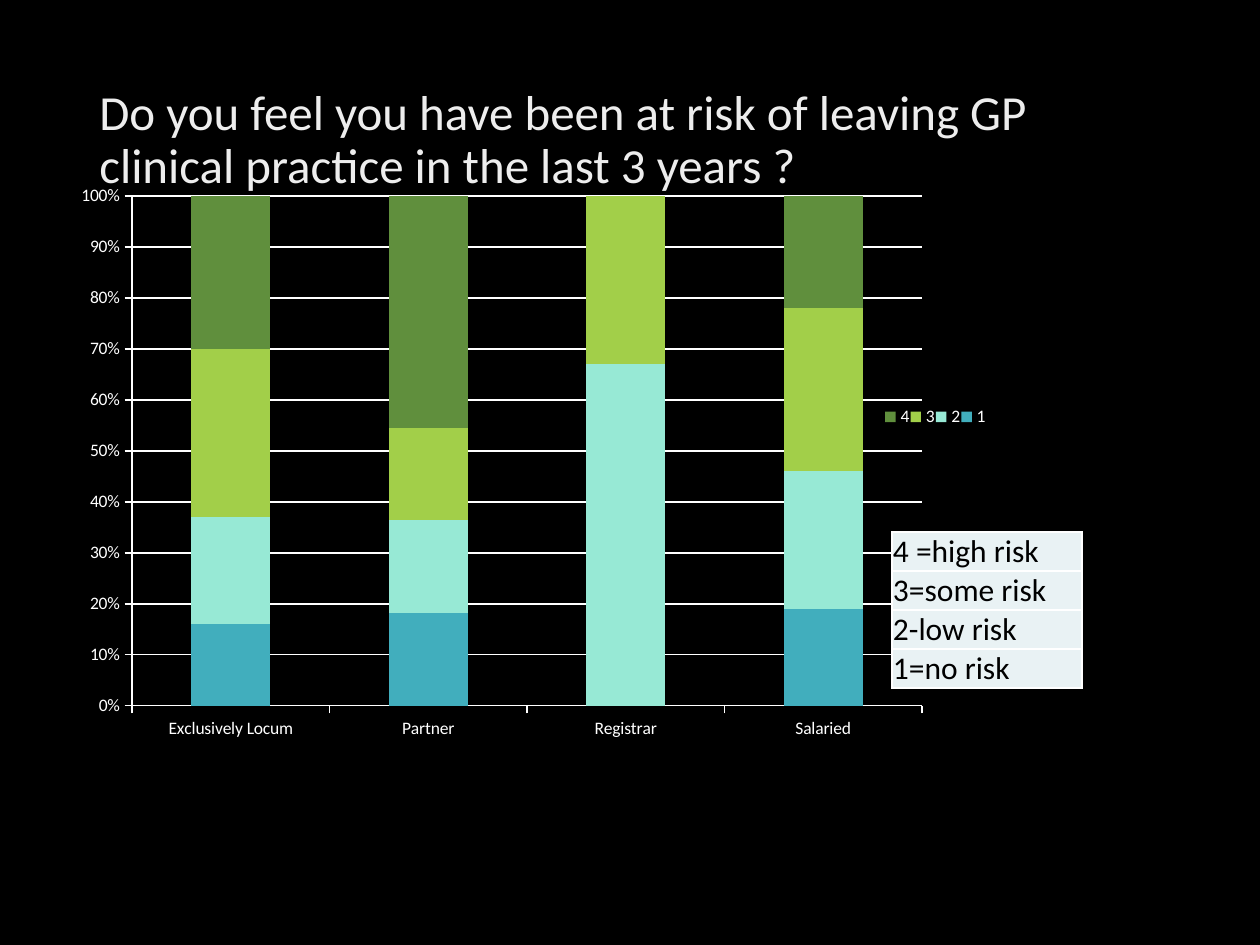
from typing import NamedTuple, Optional

import pptx
import pptx.chart.data
import pptx.dml.color
import pptx.enum.chart
import pptx.enum.text
import pptx.oxml
import pptx.oxml.ns
import pptx.util
from lxml import etree

PX = 914400 // 126
FONT = "Calibri"
RGB = pptx.dml.color.RGBColor
BLACK = RGB(0x00, 0x00, 0x00)
WHITE = RGB(0xFF, 0xFF, 0xFF)
TITLE_GREY = RGB(0xED, 0xED, 0xED)
KEY_FILL = RGB(0xE9, 0xF2, 0xF4)


class Box(NamedTuple):
    left: int
    top: int
    width: int
    height: int

    def emu(self) -> list[int]:
        return [v * PX for v in self]


class RiskSeries(NamedTuple):
    name: str
    values: tuple[Optional[int], ...]
    color: RGB


TITLE = "Do you feel you have been at risk of leaving GP clinical practice in the last 3 years ?"
CATEGORIES = ("Exclusively Locum", "Partner", "Registrar", "Salaried")
SERIES = (
    RiskSeries("1", (16, 18, None, 19), RGB(0x41, 0xAE, 0xBD)),
    RiskSeries("2", (21, 18, 67, 27), RGB(0x97, 0xE9, 0xD5)),
    RiskSeries("3", (33, 18, 33, 32), RGB(0xA2, 0xCF, 0x49)),
    RiskSeries("4", (30, 45, None, 22), RGB(0x60, 0x8F, 0x3D)),
)
RISK_KEY = ("4 =high risk", "3=some risk", "2-low risk", "1=no risk")

TITLE_BOX = Box(87, 50, 1086, 183)
CHART_BOX = Box(63, 175, 924, 576)
PLOT_BOX = Box(132, 196, 790, 510)
LEGEND_BOX = Box(884, 404, 108, 26)
KEY_BOX = Box(892, 532, 190, 156)


def style_run(r, size: int, color: RGB) -> None:
    r.font.name = FONT
    r.font.size = pptx.util.Pt(size)
    r.font.color.rgb = color


def add_title(s) -> None:
    tf = s.shapes.add_textbox(*TITLE_BOX.emu()).text_frame
    tf.word_wrap = True
    tf.vertical_anchor = pptx.enum.text.MSO_ANCHOR.MIDDLE
    tf.text = TITLE
    p = tf.paragraphs[0]
    p.line_spacing = 0.9
    style_run(p.runs[0], 28, TITLE_GREY)


def layout_xml(box: Box, inner: bool):
    """Manual chart layout, as fractions of the chart's frame."""
    fractions = {
        "x": (box.left - CHART_BOX.left) / CHART_BOX.width,
        "y": (box.top - CHART_BOX.top) / CHART_BOX.height,
        "w": box.width / CHART_BOX.width,
        "h": box.height / CHART_BOX.height,
    }
    target = '<c:layoutTarget val="inner"/>' if inner else ""
    modes = "".join(f'<c:{k}Mode val="edge"/>' for k in "xy")
    values = "".join(f'<c:{k} val="{v:.4f}"/>' for k, v in fractions.items())
    return pptx.oxml.parse_xml(
        f'<c:layout {pptx.oxml.ns.nsdecls("c")}>'
        f"<c:manualLayout>{target}{modes}{values}</c:manualLayout></c:layout>"
    )


def set_layout(parent, box: Box, index: int, inner: bool = False) -> None:
    for old in parent.findall(pptx.oxml.ns.qn("c:layout")):
        parent.remove(old)
    parent.insert(index, layout_xml(box, inner))


def white_line(line) -> None:
    line.color.rgb = WHITE
    line.width = pptx.util.Pt(0.75)


def add_risk_chart(s) -> None:
    data = pptx.chart.data.CategoryChartData()
    data.categories = CATEGORIES
    for item in SERIES:
        data.add_series(item.name, item.values)
    kind = pptx.enum.chart.XL_CHART_TYPE.COLUMN_STACKED_100
    chart = s.shapes.add_chart(kind, *CHART_BOX.emu(), data).chart
    chart.has_title = False
    chart.font.name = FONT
    chart.font.size = pptx.util.Pt(10)
    chart.font.color.rgb = WHITE

    # Columns
    plot = chart.plots[0]
    plot.gap_width = 150
    plot.overlap = 100
    plot.vary_by_categories = False
    for series, item in zip(plot.series, SERIES):
        series.format.fill.solid()
        series.format.fill.fore_color.rgb = item.color

    # Axes
    for axis in (chart.category_axis, chart.value_axis):
        axis.major_tick_mark = pptx.enum.chart.XL_TICK_MARK.OUTSIDE
        white_line(axis.format.line)
    value_axis = chart.value_axis
    value_axis.has_major_gridlines = True
    white_line(value_axis.major_gridlines.format.line)
    value_axis.tick_labels.number_format = "0%"
    value_axis.tick_labels.number_format_is_linked = False

    # Legend and placement
    chart.has_legend = True
    chart.legend.position = pptx.enum.chart.XL_LEGEND_POSITION.RIGHT
    chart.legend.include_in_layout = False
    legend = chart.legend._element
    set_layout(legend, LEGEND_BOX, 1)
    set_layout(legend.getparent().find(pptx.oxml.ns.qn("c:plotArea")), PLOT_BOX, 0, inner=True)


def add_borders(cell) -> None:
    qn = pptx.oxml.ns.qn
    props = cell._tc.get_or_add_tcPr()
    for side in "LRTB":
        ln = etree.SubElement(props, qn(f"a:ln{side}"), w=str(pptx.util.Pt(1)))
        fill = etree.SubElement(ln, qn("a:solidFill"))
        etree.SubElement(fill, qn("a:srgbClr"), val=str(WHITE))


def add_risk_key(s) -> None:
    table = s.shapes.add_table(len(RISK_KEY), 1, *KEY_BOX.emu()).table
    table.first_row = False
    table.horz_banding = False
    for i, text in enumerate(RISK_KEY):
        cell = table.cell(i, 0)
        cell.text = text
        cell.vertical_anchor = pptx.enum.text.MSO_ANCHOR.BOTTOM
        cell.margin_left = cell.margin_right = cell.margin_top = PX
        cell.margin_bottom = 0
        add_borders(cell)
        cell.fill.solid()
        cell.fill.fore_color.rgb = KEY_FILL
        style_run(cell.text_frame.paragraphs[0].runs[0], 18, BLACK)


def main() -> None:
    prs = pptx.Presentation()
    prs.slide_width = pptx.util.Inches(10)
    prs.slide_height = pptx.util.Inches(7.5)
    s = prs.slides.add_slide(prs.slide_layouts[6])
    s.background.fill.solid()
    s.background.fill.fore_color.rgb = BLACK
    add_title(s)
    add_risk_chart(s)
    add_risk_key(s)
    prs.save("out.pptx")


if __name__ == "__main__":
    main()
